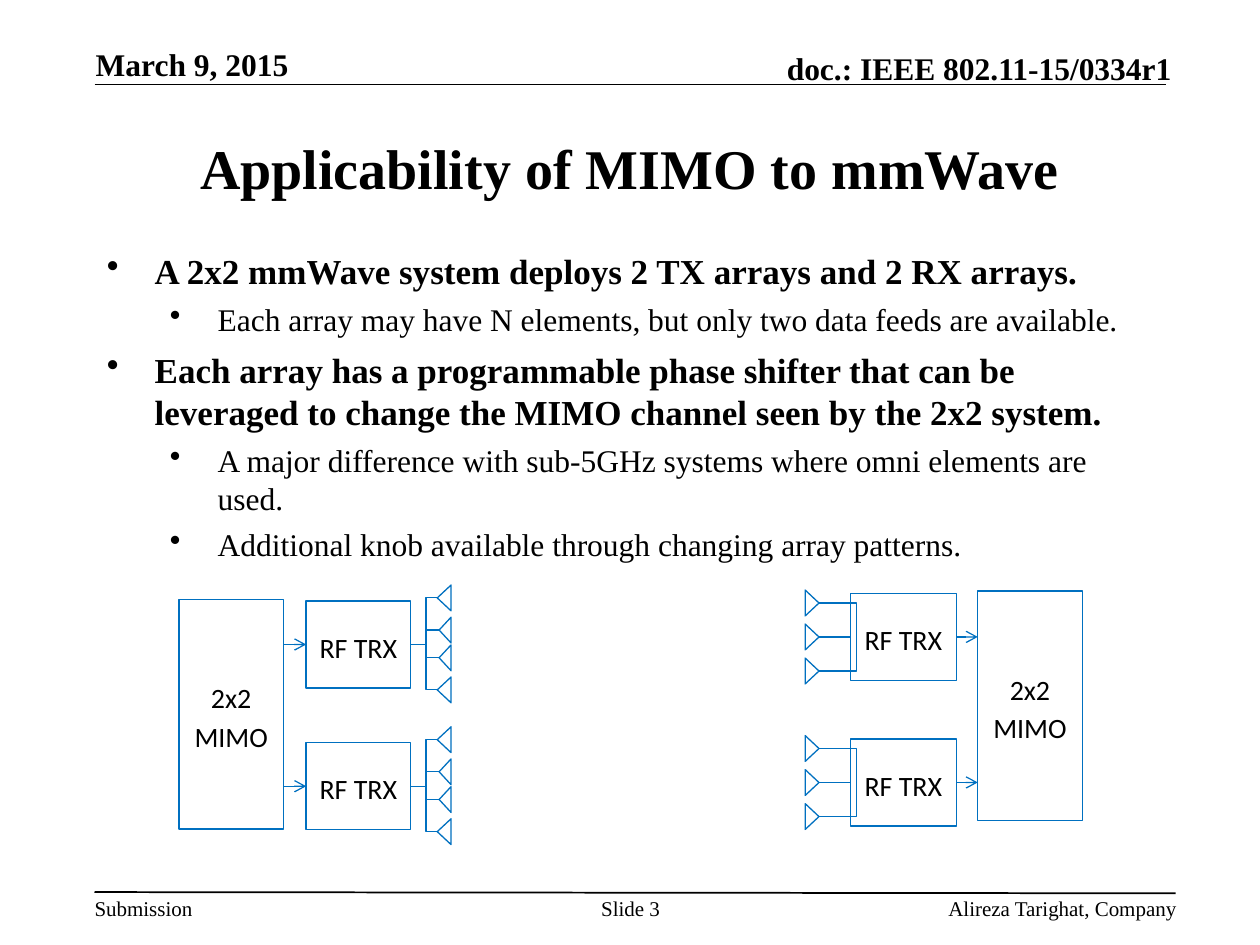
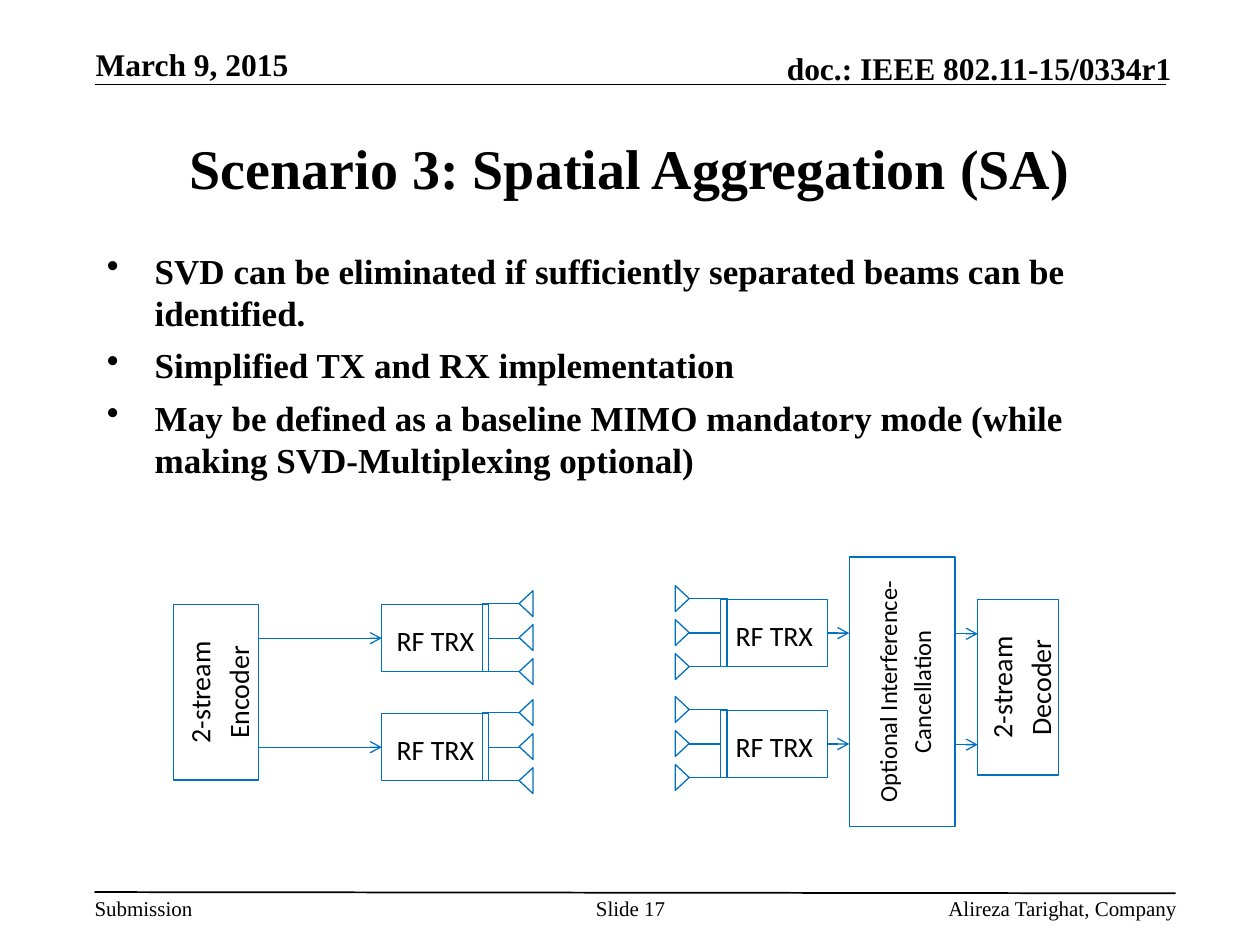
from dataclasses import dataclass

from lxml.etree import SubElement
from pptx import Presentation
from pptx.dml.color import RGBColor
from pptx.enum.shapes import MSO_CONNECTOR as CONN, MSO_SHAPE as SHAPE
from pptx.enum.text import MSO_ANCHOR as ANCHOR, MSO_AUTO_SIZE as FIT, PP_ALIGN as ALIGN
from pptx.oxml.ns import qn
from pptx.util import Inches, Pt

WIDTH, HEIGHT = Inches(10), Inches(7.5)
COLS, ROWS = 100, 75


@dataclass(frozen=True)
class Theme:
    """Colours, fonts and type sizes of the deck."""
    ink: RGBColor = RGBColor(0, 0, 0)
    wire: RGBColor = RGBColor(0x00, 0x70, 0xC0)
    serif: str = "Times New Roman"
    sans: str = "Calibri"
    title: int = 32
    header: int = 18
    footer: int = 12
    bullets: tuple = (20, 18)
    label: int = 16
    small_label: int = 14
    rule: float = 1
    wire_width: float = 0.75


T = Theme()


def col(n):
    """Return the length of n grid columns."""
    return round(WIDTH * n / COLS)


def row(n):
    """Return the length of n grid rows."""
    return round(HEIGHT * n / ROWS)


def frame(x, y, w, h):
    """Turn grid units into left, top, width and height."""
    return col(x), row(y), col(w), row(h)


def add_run(p, words, size, bold=False, face=T.serif):
    """Add one formatted run to a paragraph."""
    r = p.add_run()
    r.text = words
    r.font.name, r.font.size, r.font.bold = face, Pt(size), bold
    r.font.color.rgb = T.ink


def set_frame(tf, anchor, margins, wrap=True):
    """Set the anchor, the side and top margins and the wrapping of a text frame."""
    tf.auto_size = FIT.NONE
    tf.word_wrap, tf.vertical_anchor = wrap, anchor
    tf.margin_left = tf.margin_right = Inches(margins[0])
    tf.margin_top, tf.margin_bottom = Inches(margins[1]), Inches(margins[2])


def caption(s, at, words, size, align=ALIGN.LEFT, bold=False, wrap=True):
    """Add a header or footer text; the bold ones sit on the header rule."""
    tf = s.shapes.add_textbox(*frame(*at)).text_frame
    if bold:
        set_frame(tf, ANCHOR.BOTTOM, (0, 0, 0))
    else:
        set_frame(tf, ANCHOR.TOP, (0, 0.03, 0), wrap)
    p = tf.paragraphs[0]
    p.alignment = align
    add_run(p, words, size, bold)


def line(s, x1, y1, x2, y2, color=T.wire, width=T.wire_width, arrow=False,
         begin=None, end=None):
    """Add a straight connector, joined to (shape, site) pairs if given."""
    c = s.shapes.add_connector(CONN.STRAIGHT, col(x1), row(y1), col(x2), row(y2))
    if begin:
        c.begin_connect(*begin)
        c.end_y = c.begin_y
    if end:
        c.end_connect(*end)
        c.begin_y = c.end_y
    c.line.color.rgb, c.line.width = color, Pt(width)
    pr = c.element.spPr
    if arrow:
        SubElement(pr.find(qn("a:ln")), qn("a:tailEnd"), type="arrow")
    SubElement(pr, qn("a:effectLst"))
    return c


def outline(sp):
    """Give a shape the thin wire outline, no fill and no shadow."""
    sp.shadow.inherit = False
    sp.fill.background()
    sp.line.color.rgb, sp.line.width = T.wire, Pt(T.wire_width)
    return sp


def turned(s, kind, x, y, w, h, angle):
    """Add a quarter-turned shape that covers the given area."""
    sp = s.shapes.add_shape(kind, *frame(x + (w - h) / 2, y + (h - w) / 2, h, w))
    sp.rotation = angle
    return outline(sp)


def block(s, words, x, y, w, h, size=T.label, upright=False):
    """Add a labelled block, with the label running upwards if upright."""
    if upright:
        sp = turned(s, SHAPE.RECTANGLE, x, y, w, h, 270)
    else:
        sp = outline(s.shapes.add_shape(SHAPE.RECTANGLE, *frame(x, y, w, h)))
    tf = sp.text_frame
    set_frame(tf, ANCHOR.MIDDLE, (0.05, 0.05, 0.05))
    p = tf.paragraphs[0]
    p.alignment, p.line_spacing, p.space_after = ALIGN.CENTER, 1.15, Pt(10)
    add_run(p, words, size, face=T.sans)
    return sp


def antenna_array(s, box, edge, base, bus, heights, inner_depth=1.1):
    """Wire a column of antennas, whose bases line up, to one side of a box."""
    side = 1 if base > edge else -1
    site = (box, 3 if side > 0 else 1)
    outside = (bus - edge) * side > 0
    tip = base - 1.1 * side
    top, bottom = heights[0], heights[-1]
    pen = s.shapes.build_freeform(col(tip), row(top))
    pen.add_line_segments([(col(bus), row(top)), (col(bus), row(bottom)),
                           (col(tip), row(bottom))], close=False)
    outline(pen.convert_to_shape())
    if outside:
        mid = (top + bottom) / 2
        line(s, edge, mid, bus, mid, begin=site)
    for y in heights:
        inner = y not in (top, bottom)
        depth = inner_depth if inner else 1.1
        turned(s, SHAPE.FLOWCHART_MERGE, base - depth if side > 0 else base,
               y - 1.02, depth, 2.05, 90 if side > 0 else 270)
        if inner:
            start = bus if outside else edge
            line(s, start, y, base - depth * side, y, begin=None if outside else site)


def bullets(s, items):
    """Add the bulleted text from (level, words) pairs."""
    tf = s.shapes.add_textbox(*frame(7.5, 19.3, 85, 45)).text_frame
    set_frame(tf, ANCHOR.TOP, (0.1, 0.05, 0.05))
    for i, (level, words) in enumerate(items):
        p = tf.paragraphs[0] if i == 0 else tf.add_paragraph()
        p.level = level
        pr = p._p.get_or_add_pPr()
        pr.set("marL", str(Inches(0.38 + 0.5 * level)))
        pr.set("indent", str(-Inches(0.38)))
        tint = SubElement(pr, qn("a:buClr"))
        SubElement(tint, qn("a:srgbClr"), val=str(T.ink))
        SubElement(pr, qn("a:buChar"), char="•")
        p.space_before = Pt(0 if i == 0 else 6 - level)
        add_run(p, words, T.bullets[level], bold=level == 0)


def new_slide(prs, title, number, items):
    """Add a slide with its header, title, bullets and footer."""
    s = prs.slides.add_slide(prs.slide_layouts[5])
    sp = s.shapes.title
    sp.left, sp.top, sp.width, sp.height = frame(7.5, 7.5, 85, 11.6)
    set_frame(sp.text_frame, ANCHOR.MIDDLE, (0.1, 0.05, 0.05))
    p = sp.text_frame.paragraphs[0]
    p.alignment = ALIGN.CENTER
    add_run(p, title, T.title, bold=True)
    line(s, 7.5, 6.7, 92.5, 6.7, T.ink, T.rule)
    line(s, 7.5, 70.8, 93.3, 70.9, T.ink, T.rule)
    caption(s, (7.6, 3.6, 20.5, 3), "March 9, 2015", T.header, bold=True)
    caption(s, (54.7, 3.9, 38.3, 3), "doc.: IEEE 802.11-15/0334r1", T.header,
            ALIGN.RIGHT, bold=True)
    caption(s, (7.5, 70.8, 7.9, 2.5), "Submission", T.footer, wrap=False)
    caption(s, (46.1, 70.8, 7.9, 2.9), f"Slide {number}", T.footer, ALIGN.CENTER)
    caption(s, (58.6, 70.8, 34.8, 2), "Alireza Tarighat, Company", T.footer, ALIGN.RIGHT)
    bullets(s, items)
    return s


def mimo_slide(prs):
    """Build the slide on a 2x2 system with two arrays on each side."""
    s = new_slide(prs, "Applicability of MIMO to mmWave", 3, [
        (0, "A 2x2 mmWave system deploys 2 TX arrays and 2 RX arrays."),
        (1, "Each array may have N elements, but only two data feeds are available."),
        (0, "Each array has a programmable phase shifter that can be leveraged to "
            "change the MIMO channel seen by the 2x2 system."),
        (1, "A major difference with sub-5GHz systems where omni elements are used."),
        (1, "Additional knob available through changing array patterns."),
    ])
    block(s, "2x2 MIMO", 14.2, 47.6, 8.3, 18.2)
    block(s, "2x2 MIMO", 77.6, 46.9, 8.3, 18.2)
    for drop in (0, 11.25):
        tx = block(s, "RF TRX", 24.3, 47.7 + drop, 8.3, 6.9)
        line(s, 22.5, 51.1 + drop, 24.3, 51.1 + drop, arrow=True, end=(tx, 1))
        antenna_array(s, tx, 32.6, 35.8, 33.8,
                      [y + drop for y in (47.45, 50, 52.2, 54.75)], inner_depth=0.95)
    for drop in (0, 11.55):
        rx = block(s, "RF TRX", 67.5, 47.1 + drop, 8.4, 6.9)
        line(s, 75.9, 50.6 + drop, 77.6, 50.6 + drop, arrow=True, begin=(rx, 3))
        antenna_array(s, rx, 67.5, 63.9, 68,
                      [y + drop for y in (47.85, 50.55, 53.25)])


def aggregation_slide(prs):
    """Build the slide on spatial aggregation from encoder to decoder."""
    s = new_slide(prs, "Scenario 3: Spatial Aggregation (SA)", 17, [
        (0, "SVD can be eliminated if sufficiently separated beams can be identified."),
        (0, "Simplified TX and RX implementation"),
        (0, "May be defined as a baseline MIMO mandatory mode (while making "
            "SVD-Multiplexing optional)"),
    ])
    block(s, "2-stream Encoder", 13.8, 48, 6.7, 13.9, upright=True)
    block(s, "Optional Interference-Cancellation", 67.4, 44.2, 8.4, 21.4,
          T.small_label, upright=True)
    block(s, "2-stream Decoder", 77.6, 47.6, 6.4, 13.9, upright=True)
    for drop in (0, 8.65):
        tx = block(s, "RF TRX", 30.3, 48 + drop, 8.5, 5.3)
        line(s, 20.5, 50.7 + drop, 30.3, 50.7 + drop, arrow=True, end=(tx, 1))
        antenna_array(s, tx, 38.8, 42.3, 38.3,
                      [y + drop for y in (47.9, 50.6, 53.3)])
    for drop in (0, 8.8):
        rx = block(s, "RF TRX", 57.2, 47.6 + drop, 8.5, 5.3)
        line(s, 65.7, 50.3 + drop, 67.4, 50.3 + drop, arrow=True, begin=(rx, 3))
        line(s, 75.8, 50.3 + drop, 77.6, 50.3 + drop, arrow=True)
        antenna_array(s, rx, 57.2, 53.6, 57.7,
                      [y + drop for y in (47.5, 50.2, 52.9)])


def main():
    """Build and save the deck."""
    prs = Presentation()
    prs.slide_width, prs.slide_height = WIDTH, HEIGHT
    mimo_slide(prs)
    aggregation_slide(prs)
    prs.save("out.pptx")


if __name__ == "__main__":
    main()
